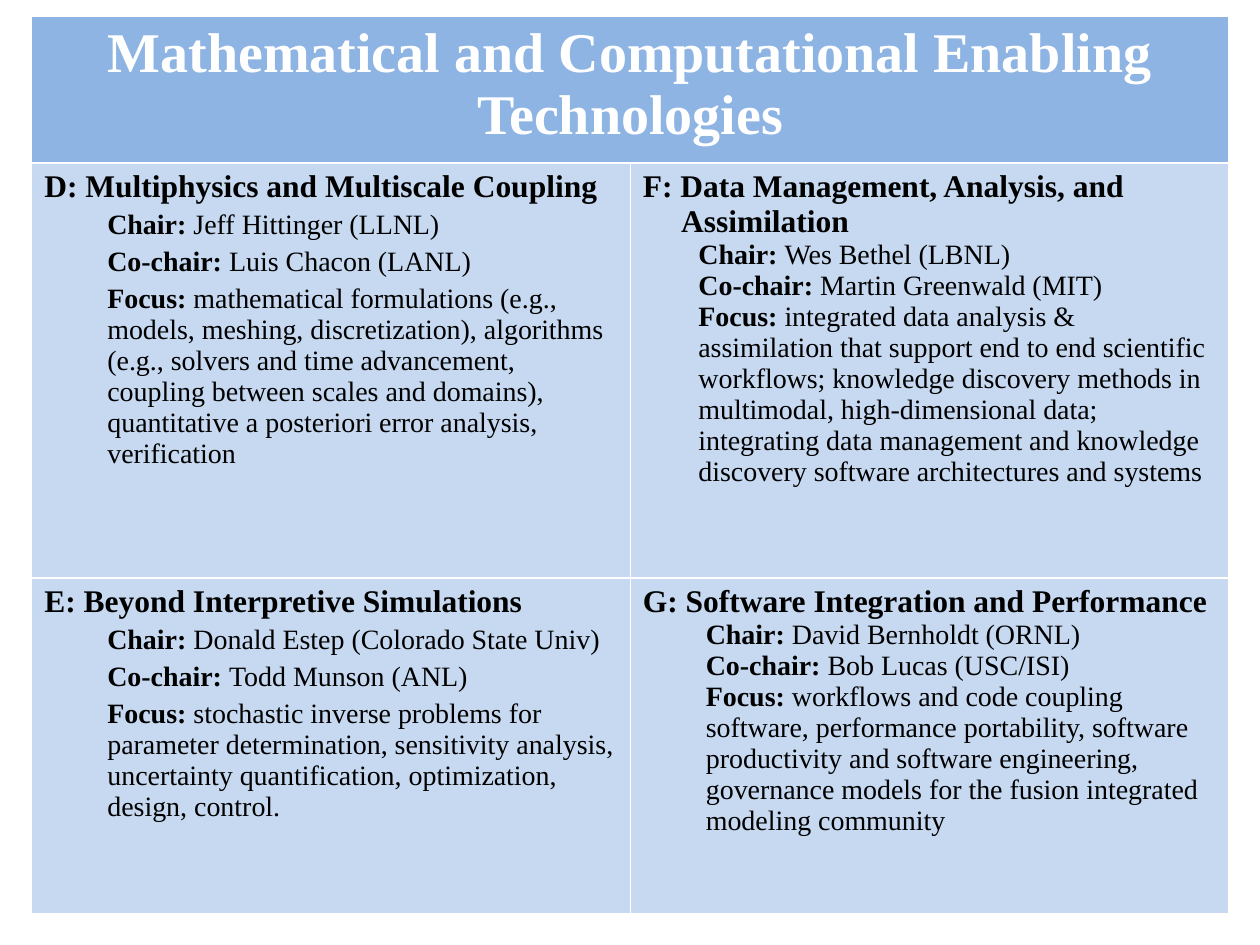
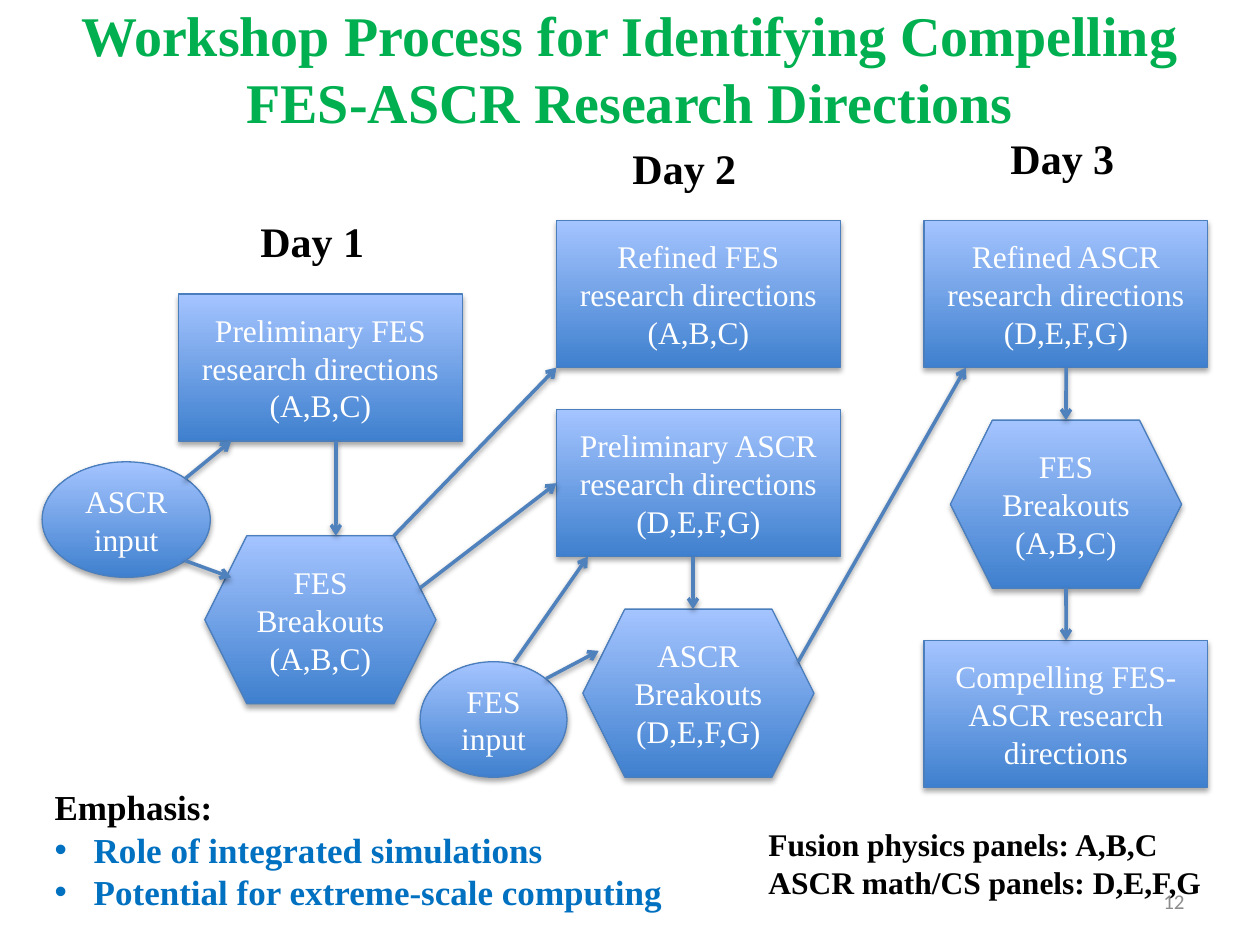
from lxml import etree
from pptx import Presentation
from pptx import util as u
from pptx.dml.color import RGBColor
from pptx.enum import shapes, text
from pptx.oxml import ns

Cm, Pt = u.Cm, u.Pt
SHAPE = shapes.MSO_SHAPE
ALIGN = text.PP_ALIGN
SERIF = "Times New Roman"
TITLE_SIZE = 32
WHITE = RGBColor(0xFF, 0xFF, 0xFF)
BLACK = RGBColor(0, 0, 0)
GREEN = RGBColor(0x00, 0xB0, 0x50)
BLUE = RGBColor(0x00, 0x70, 0xC0)
GREY = RGBColor(0x8C, 0x8C, 0x8C)
HEADER_FILL = RGBColor(0x8E, 0xB4, 0xE3)
PANEL_FILL = RGBColor(0xC6, 0xD9, 0xF1)
STEP_DARK = RGBColor(0x3F, 0x80, 0xCE)
STEP_LIGHT = RGBColor(0xA4, 0xC4, 0xFF)
STEP_EDGE = RGBColor(0x4B, 0x7E, 0xBC)
ARROW = RGBColor(0x4F, 0x81, 0xBD)


def write(frame, words, size, color, bold=False, align=ALIGN.LEFT, font=SERIF):
    frame.text = words
    for para in frame.paragraphs:
        para.alignment = align
        para.font.name = font
        para.font.size = Pt(size)
        para.font.bold = bold
        para.font.color.rgb = color


def add_text(page, place, words, size, color, wrap=True, **style):
    box = page.shapes.add_textbox(*map(Cm, place))
    box.text_frame.word_wrap = wrap
    write(box.text_frame, words, size, color, **style)
    return box


deck = Presentation()
deck.slide_width, deck.slide_height = Cm(25.4), Cm(19.05)
blank = deck.slide_layouts[6]

page = deck.slides.add_slide(blank)
table = page.shapes.add_table(3, 2, Cm(0.64), Cm(0.33), Cm(24.13), Cm(18.08)).table
table.horz_banding = False
for row, height in zip(table.rows, (2.96, 8.36, 6.76)):
    row.height = Cm(height)
header = table.cell(0, 0)
header.merge(table.cell(0, 1))
for column in range(2):
    table.cell(0, column).fill.solid()
    table.cell(0, column).fill.fore_color.rgb = HEADER_FILL
write(header.text_frame, "Mathematical and Computational Enabling Technologies",
      TITLE_SIZE, WHITE, bold=True, align=ALIGN.CENTER)

panels = [
    (1, 0, ["D: Multiphysics and Multiscale Coupling"], 1.27, 3.2,
     "Jeff Hittinger (LLNL)", "Luis Chacon (LANL)",
     "mathematical formulations (e.g., models, meshing, discretization), algorithms "
     "(e.g., solvers and time advancement, coupling between scales and domains), "
     "quantitative a posteriori error analysis, verification"),
    (1, 1, ["F: Data Management, Analysis, and", "Assimilation"], 1.12, 0,
     "Wes Bethel (LBNL)", "Martin Greenwald (MIT)",
     "integrated data analysis & assimilation that support end to end scientific "
     "workflows; knowledge discovery methods in multimodal, high-dimensional data; "
     "integrating data management and knowledge discovery software architectures and systems"),
    (2, 0, ["E: Beyond Interpretive Simulations"], 1.27, 3.2,
     "Donald Estep (Colorado State Univ)", "Todd Munson (ANL)",
     "stochastic inverse problems for parameter determination, sensitivity analysis, "
     "uncertainty quantification, optimization, design, control."),
    (2, 1, ["G: Software Integration and Performance"], 1.27, 0,
     "David Bernholdt (ORNL)", "Bob Lucas (USC/ISI)",
     "workflows and code coupling software, performance portability, software "
     "productivity and software engineering, governance models for the fusion "
     "integrated modeling community"),
]
for row, column, heading, indent, gap, *details in panels:
    cell = table.cell(row, column)
    cell.fill.solid()
    cell.fill.fore_color.rgb = PANEL_FILL
    frame = cell.text_frame
    write(frame, "\n".join(heading), 18, BLACK, bold=True)
    for para in frame.paragraphs[1:]:
        para._p.get_or_add_pPr().set("marL", str(Cm(0.77)))
    for label, detail in zip(("Chair: ", "Co-chair: ", "Focus: "), details):
        para = frame.add_paragraph()
        para.space_before = Pt(gap)
        para.font.name = SERIF
        para.font.size = Pt(16)
        para.font.color.rgb = BLACK
        para._p.get_or_add_pPr().set("marL", str(Cm(indent)))
        for words, bold in ((label, True), (detail, False)):
            span = para.add_run()
            span.text = words
            span.font.bold = bold

page = deck.slides.add_slide(blank)
title = add_text(page, (1.27, 0.2, 22.86, 2.33),
                 "Workshop Process for Identifying Compelling FES-ASCR Research Directions",
                 TITLE_SIZE, GREEN, bold=True, align=ALIGN.CENTER)
title.text_frame.vertical_anchor = text.MSO_ANCHOR.MIDDLE

emphasis = add_text(page, (0.85, 15.72, 13.13, 2.82),
                    "Emphasis:\nRole of integrated simulations\nPotential for extreme-scale computing",
                    20, BLACK, bold=True)
for para in emphasis.text_frame.paragraphs[1:]:
    para.font.color.rgb = BLUE
    props = para._p.get_or_add_pPr()
    props.set("marL", str(Cm(0.79)))
    props.set("indent", str(-Cm(0.79)))
    bullet_font = etree.Element(ns.qn("a:buFont"), typeface="Arial")
    bullet = etree.Element(ns.qn("a:buChar"), char="•")
    props.insert(0, bullet_font)
    props.insert(1, bullet)

for day, left, top in ((1, 5, 4.22), (2, 12.5, 2.74), (3, 20.12, 2.54)):
    add_text(page, (left, top, 2.62, 1.27), f"Day {day}", 24, BLACK, wrap=False, bold=True)

RECT, HEXAGON = (SHAPE.RECTANGLE, 5.72, 2.96), (SHAPE.HEXAGON, 4.66, 3.39)
steps = {
    "early_fes": (RECT, 3.6, 5.93, "Preliminary FES research directions\n(A,B,C)"),
    "early_ascr": (RECT, 11.22, 8.26, "Preliminary ASCR research directions\n(D,E,F,G)"),
    "refined_fes": (RECT, 11.22, 4.45, "Refined FES research directions\n(A,B,C)"),
    "refined_ascr": (RECT, 18.63, 4.45, "Refined ASCR research directions\n(D,E,F,G)"),
    "compelling": (RECT, 18.63, 12.91, "Compelling FES- ASCR research directions"),
    "fes_input": ((SHAPE.OVAL, 2.96, 2.33), 8.47, 13.34, "FES input"),
    "ascr_input": ((SHAPE.OVAL, 3.39, 2.33), 0.85, 9.31, "ASCR input"),
    "day1_breakouts": (HEXAGON, 4.13, 10.8, "FES\nBreakouts\n(A,B,C)"),
    "day2_breakouts": (HEXAGON, 11.75, 12.28, "ASCR\nBreakouts\n(D,E,F,G)"),
    "day3_breakouts": (HEXAGON, 19.16, 8.47, "FES\nBreakouts\n(A,B,C)"),
}
boxes = {}
for name, ((kind, width, height), left, top, words) in steps.items():
    box = page.shapes.add_shape(kind, Cm(left), Cm(top), Cm(width), Cm(height))
    box.fill.gradient()
    box.fill.gradient_angle = 90
    for stop, color in zip(box.fill.gradient_stops, (STEP_DARK, STEP_LIGHT)):
        stop.color.rgb = color
    box.line.color.rgb = STEP_EDGE
    box.line.width = Pt(0.75)
    write(box.text_frame, words, 18, WHITE, align=ALIGN.CENTER)
    boxes[name] = box

arrows = [
    (11.01, 13.68, 12.07, 13.12, None, None),
    (3.73, 9.65, 4.66, 8.89, None, None),
    (6.77, 8.89, 6.77, 10.8, None, None),
    (3.73, 11.3, 4.66, 11.64, None, None),
    (8.47, 11.85, 11.22, 9.74, None, ("early_ascr", 1)),
    (7.94, 10.8, 11.22, 7.41, None, None),
    (13.97, 11.22, 13.97, 12.28, None, None),
    (16.09, 13.34, 19.47, 7.41, None, None),
    (21.49, 7.41, 21.49, 8.47, ("refined_ascr", 2), None),
    (10.37, 13.34, 11.85, 11.22, None, None),
    (21.49, 11.85, 21.49, 12.91, None, ("compelling", 0)),
]
for *ends, start, finish in arrows:
    arrow = page.shapes.add_connector(shapes.MSO_CONNECTOR.STRAIGHT, *map(Cm, ends))
    if start:
        arrow.begin_connect(boxes[start[0]], start[1])
    if finish:
        arrow.end_connect(boxes[finish[0]], finish[1])
    arrow.line.color.rgb = ARROW
    arrow.line.width = Pt(2)
    etree.SubElement(arrow.line._get_or_add_ln(), ns.qn("a:tailEnd"), type="arrow")

add_text(page, (15.24, 16.51, 9.32, 1.8),
         "Fusion physics panels: A,B,C\nASCR math/CS panels: D,E,F,G",
         18, BLACK, wrap=False, bold=True)
number = add_text(page, (18.21, 17.65, 5.92, 1.02), "12", 12, GREY,
                  align=ALIGN.RIGHT, font="Calibri")
number.text_frame.vertical_anchor = text.MSO_ANCHOR.MIDDLE

deck.save("out.pptx")
